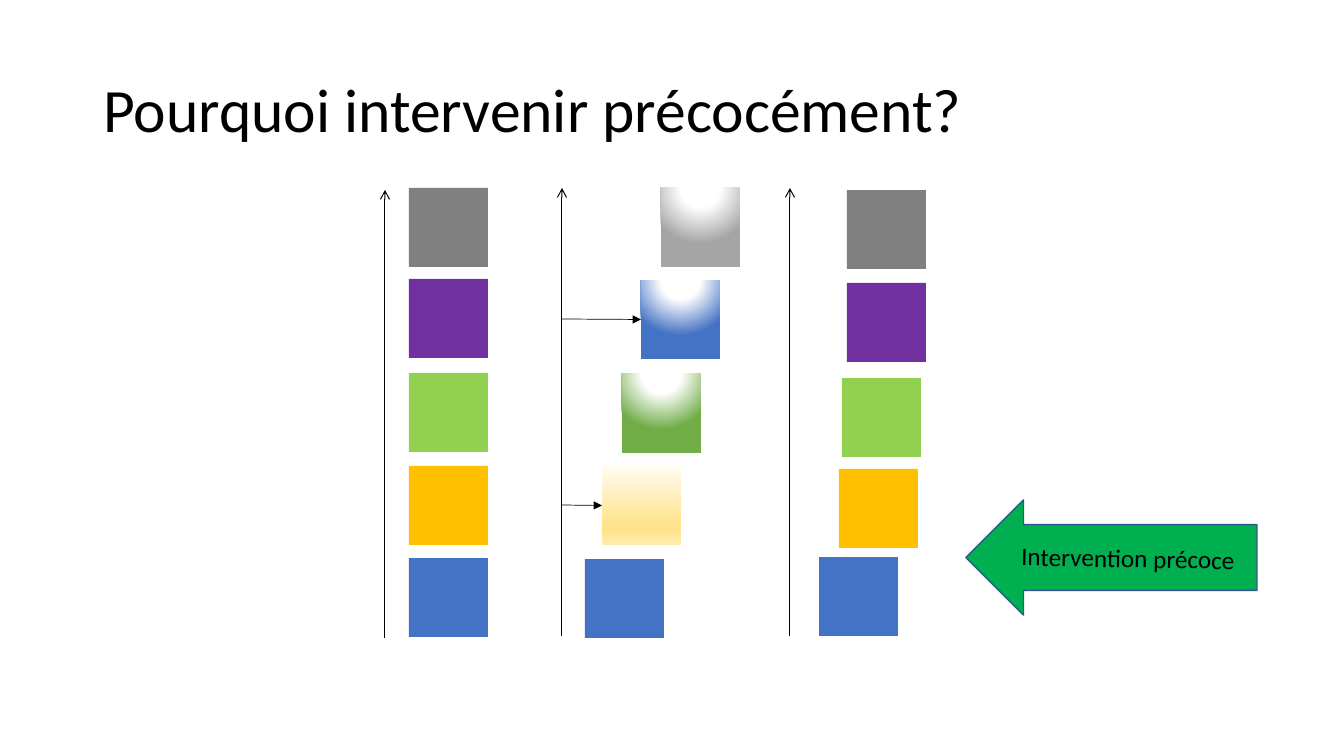
from lxml.etree import SubElement
from pptx import Presentation
from pptx.dml.color import RGBColor
from pptx.enum.shapes import MSO_CONNECTOR as Connector, MSO_SHAPE as Shape
from pptx.enum.text import MSO_ANCHOR as Anchor, PP_ALIGN as Align
from pptx.oxml.ns import qn
from pptx.util import Pt

PX = 914400 / 100.8
TILE = 79
FONT = "Calibri"
COLORS = {
    "black": "000000", "white": "FFFFFF", "grey": "808080", "silver": "A5A5A5",
    "purple": "7030A0", "lime": "92D050", "green": "70AD47", "gold": "FFC000",
    "blue": "4472C4", "cream": "FFFCF2", "sand": "FFE38C", "pale": "FFECB2",
    "emerald": "00B050", "navy": "325491",
}
SOLID_FILLS = ["grey", "purple", "lime", "gold", "blue"]


def px(length):
    """Turn pixels into EMU."""
    return round(length * PX)


def rgb(name):
    """Look up a named colour."""
    return RGBColor.from_string(COLORS[name])


def fade_from_top(color):
    """Give the stops of a white glow over a colour."""
    return [(0, "white"), (35, "white"), (100, color)]


def set_gradient(shape, stops, radial):
    """Fill a shape with a glow from its top, or with a downward gradient."""
    shape.fill.gradient()
    gradient = shape._element.spPr.find(qn("a:gradFill"))
    for part in list(gradient):
        gradient.remove(part)
    stop_list = SubElement(gradient, qn("a:gsLst"))
    for position, color in stops:
        stop = SubElement(stop_list, qn("a:gs"), pos=str(position * 1000))
        SubElement(stop, qn("a:srgbClr"), val=COLORS[color])
    if radial:
        glow = SubElement(gradient, qn("a:path"), path="circle")
        SubElement(glow, qn("a:fillToRect"), l="50000", t="-80000", r="50000", b="180000")
    else:
        SubElement(gradient, qn("a:lin"), ang="5400000", scaled="0")


def add_tile(slide, left, top):
    """Add one square without outline."""
    tile = slide.shapes.add_shape(Shape.RECTANGLE, px(left), px(top), px(TILE), px(TILE))
    tile.shadow.inherit = False
    tile.line.fill.background()
    return tile


def add_arrow(slide, start, end, width, head):
    """Add a straight black arrow."""
    arrow = slide.shapes.add_connector(Connector.STRAIGHT, *map(px, start + end))
    arrow.line.color.rgb = rgb("black")
    arrow.line.width = Pt(width)
    SubElement(arrow.line._get_or_add_ln(), qn("a:tailEnd"), type=head)
    SubElement(arrow._element.spPr, qn("a:effectLst"))
    return arrow


def add_tower(slide, left, top, height, offsets):
    """Add a time axis and the tiles beside it, listed from the top down."""
    add_arrow(slide, (left, top + height), (left, top), 0.75, "arrow")
    return [add_tile(slide, left + dx, top + dy) for dx, dy in offsets]


def add_solid_tower(slide, left, top, height, offsets):
    """Add a tower of plainly coloured tiles."""
    for tile, color in zip(add_tower(slide, left, top, height, offsets), SOLID_FILLS):
        tile.fill.solid()
        tile.fill.fore_color.rgb = rgb(color)


def add_fading_tower(slide, left, top, height, offsets):
    """Add the leaning tower of fading tiles, two of them pushed by arrows."""
    tiles = add_tower(slide, left, top, height, offsets)
    for tile, color in zip(tiles, ["silver", "blue", "green"]):
        set_gradient(tile, fade_from_top(color), radial=True)
    set_gradient(tiles[3], [(0, "cream"), (74, "sand"), (83, "sand"), (100, "pale")], radial=False)
    tiles[4].fill.solid()
    tiles[4].fill.fore_color.rgb = rgb("blue")
    for row in (1, 3):
        dx, dy = offsets[row]
        middle = top + dy + TILE // 2
        push = add_arrow(slide, (left, middle), (left + dx, middle), 0.5, "triangle")
        push.end_connect(tiles[row], 1)


def style_text(paragraph, size):
    """Set the black text font of a paragraph."""
    paragraph.font.name = FONT
    paragraph.font.size = Pt(size)
    paragraph.font.color.rgb = rgb("black")


def add_intervention(slide, left, top, width, height):
    """Add the labelled block arrow that points at the last tower."""
    block = slide.shapes.add_shape(Shape.RIGHT_ARROW, *map(px, (left, top, width, height)))
    block.rotation = 180
    block.adjustments[0] = 0.572
    block.shadow.inherit = False
    block.fill.solid()
    block.fill.fore_color.rgb = rgb("emerald")
    block.line.color.rgb = rgb("navy")
    block.line.width = Pt(1)
    frame = block.text_frame
    frame.text = "Intervention précoce"
    frame.vertical_anchor = Anchor.MIDDLE
    frame._txBody.bodyPr.set("rot", "10860000")
    frame.paragraphs[0].alignment = Align.CENTER
    style_text(frame.paragraphs[0], 18)


def set_title(slide, left, top, width, height):
    """Place and format the slide title."""
    title = slide.shapes.title
    title.left, title.top, title.width, title.height = map(px, (left, top, width, height))
    frame = title.text_frame
    frame.text = "Pourquoi intervenir précocément?"
    frame.vertical_anchor = Anchor.MIDDLE
    heading = frame.paragraphs[0]
    heading.alignment = Align.LEFT
    heading.line_spacing = 0.9
    style_text(heading, 44)


def main():
    """Build and save the slide."""
    deck = Presentation()
    deck.slide_width, deck.slide_height = px(1344), px(756)
    slide = deck.slides.add_slide(deck.slide_layouts[5])
    set_title(slide, 93, 40, 1159, 146)
    add_solid_tower(slide, 385, 190, 448, [(24, -2), (24, 89), (24, 183), (24, 276), (24, 368)])
    add_fading_tower(slide, 562, 188, 448, [(99, 0), (79, 92), (60, 186), (40, 278), (23, 371)])
    add_solid_tower(slide, 790, 188, 448, [(57, 2), (57, 95), (52, 190), (49, 281), (29, 369)])
    add_intervention(slide, 966, 500, 291, 115)
    deck.save("out.pptx")


if __name__ == "__main__":
    main()
